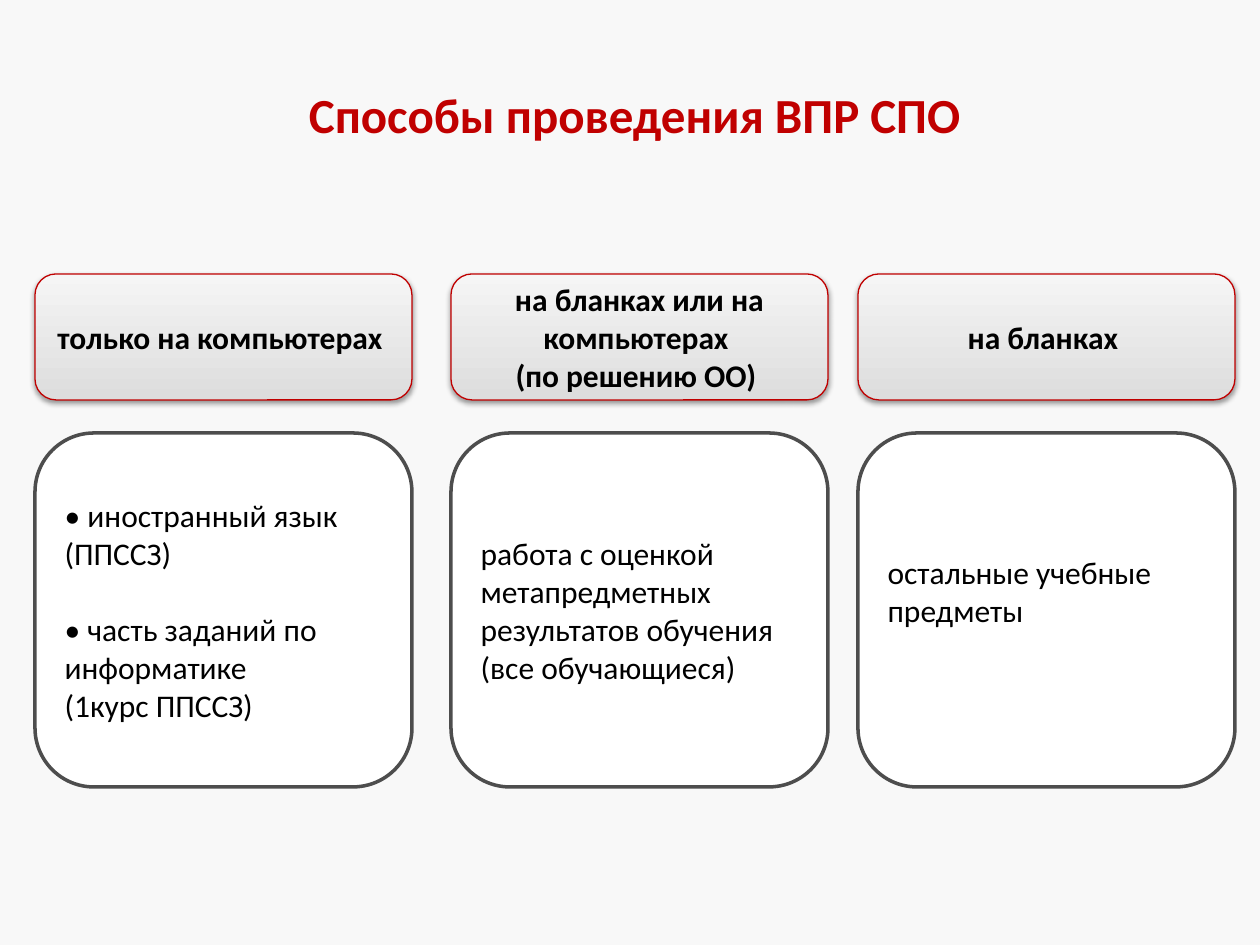
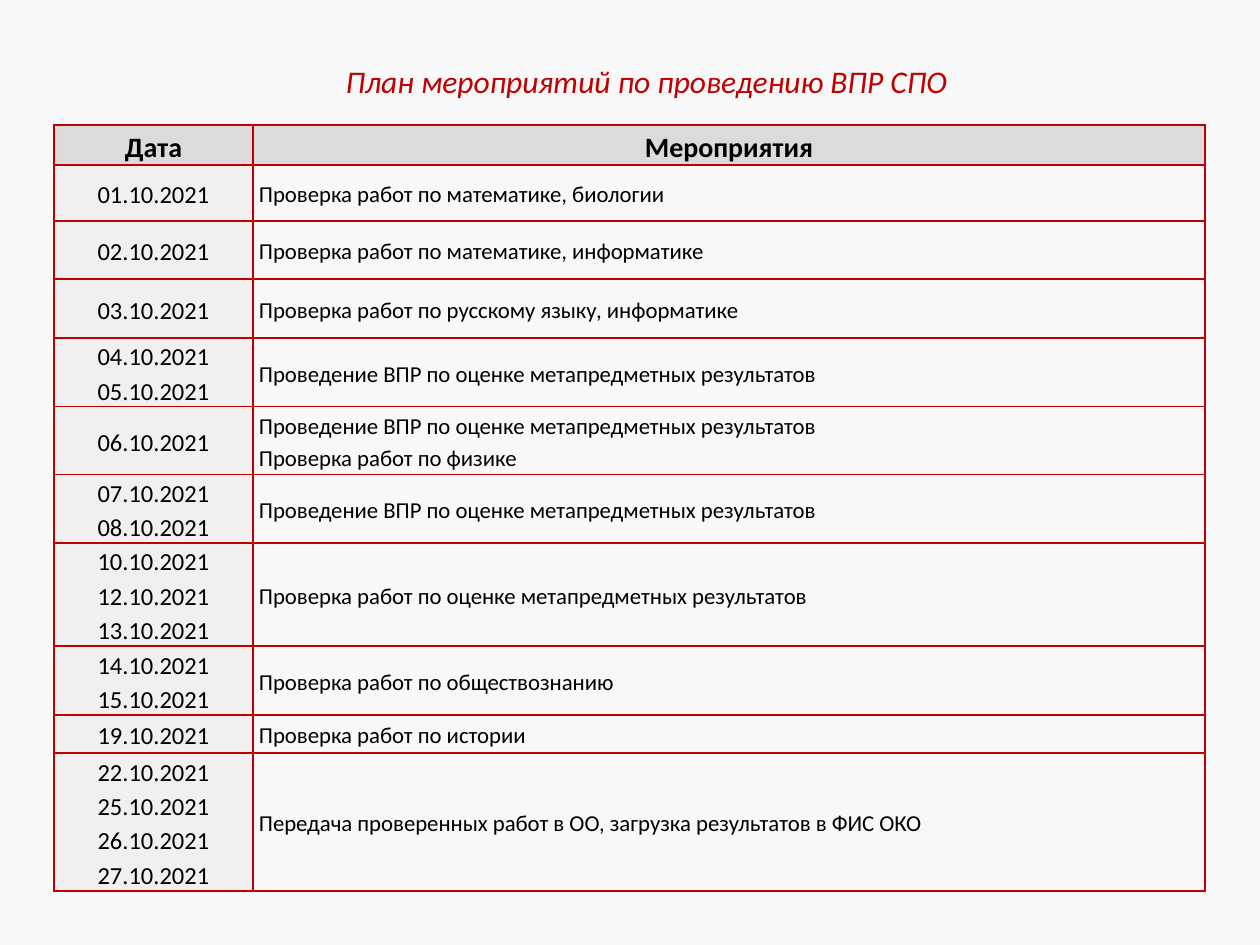
from lxml import etree
from pptx import Presentation
from pptx.dml.color import RGBColor
from pptx.enum.shapes import MSO_SHAPE
from pptx.enum.text import MSO_ANCHOR, MSO_AUTO_SIZE, PP_ALIGN
from pptx.oxml import parse_xml
from pptx.oxml.ns import nsdecls, qn
from pptx.util import Emu, Pt

ROUND_RECT = MSO_SHAPE.ROUNDED_RECTANGLE
LEFT, CENTER = PP_ALIGN.LEFT, PP_ALIGN.CENTER
MIDDLE = MSO_ANCHOR.MIDDLE

# Shared look
PX_PER_INCH = 126
FONT = "Calibri"
RED, BLACK, WHITE, GRAY = "C00000", "000000", "FFFFFF", "4D4D4D"
PAGE_FILL, HEAD_FILL, DATE_FILL = "F8F8F8", "DBDBDB", "F0F0F0"
GRADIENT = ("DDDDDD", "F5F5F5")
TITLE_ONLY = 5

# Slide 1: left edge, heading lines, body lines, extra room below the body
METHODS_TITLE = "Способы проведения ВПР СПО "
METHODS = [
    (35, ["только на компьютерах "],
     ["• иностранный язык (ППССЗ)", "• часть заданий по информатике",
      "(1курс ППССЗ)"], 0),
    (451, ["на бланках или на компьютерах ", "(по решению ОО) "],
     ["работа с оценкой метапредметных результатов обучения (все обучающиеся)"], 0),
    (858, ["на бланках "], ["остальные учебные предметы"], 38),
]
CARD_WIDTH = 377
HEAD_TOP, HEAD_HEIGHT = 274, 126
BODY_TOP, BODY_HEIGHT = 433, 354
INSET = 6
BULLET_GAP = 22

# Slide 2: row height, dates, events
PLAN_TITLE = "План мероприятий по проведению ВПР СПО"
PLAN_HEADER = (40, ["Дата"], ["Мероприятия"])
META_TEST = "Проведение ВПР по оценке метапредметных результатов"
PLAN = [
    (56, ["01.10.2021"], ["Проверка работ по математике, биологии"]),
    (58, ["02.10.2021"], ["Проверка работ по математике, информатике"]),
    (59, ["03.10.2021"], ["Проверка работ по русскому языку, информатике"]),
    (68, ["04.10.2021", "05.10.2021"], [META_TEST]),
    (68, ["06.10.2021"], [META_TEST, "Проверка работ по физике"]),
    (68, ["07.10.2021", "08.10.2021"], [META_TEST]),
    (103, ["10.10.2021", "12.10.2021", "13.10.2021"],
     ["Проверка работ по оценке метапредметных результатов"]),
    (69, ["14.10.2021", "15.10.2021"], ["Проверка работ по обществознанию"]),
    (38, ["19.10.2021"], ["Проверка работ по истории"]),
    (138, ["22.10.2021", "25.10.2021", "26.10.2021", "27.10.2021"],
     ["Передача проверенных работ в ОО, загрузка результатов в ФИС ОКО"]),
]
PLAN_LEFT, PLAN_TOP = 54, 125
PLAN_COLUMNS = (199, 952)


def px(length):
    return Emu(round(length * 914400 / PX_PER_INCH))


def color(value):
    return RGBColor.from_string(value)


def write(frame, lines, size, ink=BLACK, align=LEFT, bold=False, italic=False,
          spacing=None):
    frame.text = "\n".join(lines)
    for para in frame.paragraphs:
        para.alignment = align
        para.line_spacing = spacing
        for span in para.runs:
            font = span.font
            font.name, font.size = FONT, Pt(size)
            font.bold, font.italic = bold, italic
            font.color.rgb = color(ink)


def add_page(deck, title, place, size, wrap=True, **style):
    page = deck.slides.add_slide(deck.slide_layouts[TITLE_ONLY])
    box = page.shapes.title
    box.left, box.top, box.width, box.height = map(px, place)
    frame = box.text_frame
    frame.auto_size = MSO_AUTO_SIZE.NONE
    frame.word_wrap = wrap
    frame.vertical_anchor = MIDDLE
    write(frame, [title], size, RED, **style)
    return page


def add_card(page, left, top, height, line, line_width):
    card = page.shapes.add_shape(ROUND_RECT, px(left), px(top),
                                 px(CARD_WIDTH), px(height))
    card.shadow.inherit = False
    card.line.color.rgb = color(line)
    card.line.width = Pt(line_width)
    card.text_frame.word_wrap = True
    card.text_frame.vertical_anchor = MIDDLE
    return card


def add_heading(page, left, lines):
    card = add_card(page, left, HEAD_TOP, HEAD_HEIGHT, RED, 0.75)
    card.fill.gradient()
    card.fill.gradient_angle = 90
    for stop, value in zip(card.fill.gradient_stops, GRADIENT):
        stop.color.rgb = color(value)
    # Soft shadow below the heading
    effects = card.element.spPr.find(qn("a:effectLst"))
    effects.append(parse_xml(
        f'<a:outerShdw {nsdecls("a")} blurRad="39370" dist="20320" '
        f'dir="5400000" rotWithShape="0"><a:srgbClr val="{BLACK}">'
        '<a:alpha val="38000"/></a:srgbClr></a:outerShdw>'))
    write(card.text_frame, lines, 18, align=CENTER, bold=True)


def add_body(page, left, lines, room_below):
    card = add_card(page, left, BODY_TOP, BODY_HEIGHT, GRAY, 2)
    card.fill.solid()
    card.fill.fore_color.rgb = color(WHITE)
    frame = card.text_frame
    frame.margin_bottom = px(INSET + room_below)
    write(frame, lines, 18)
    for para in frame.paragraphs[1:]:
        if para.text.startswith("•"):
            para.space_before = Pt(BULLET_GAP)


def add_borders(cell):
    properties = cell._tc.get_or_add_tcPr()
    for position, side in enumerate(("lnL", "lnR", "lnT", "lnB")):
        border = etree.Element(qn(f"a:{side}"), w=str(Pt(1)))
        fill = etree.SubElement(border, qn("a:solidFill"))
        etree.SubElement(fill, qn("a:srgbClr"), val=RED)
        properties.insert(position, border)


def fill_cell(cell, lines, size, fill, align, bold):
    cell.margin_left = cell.margin_right = px(INSET)
    cell.margin_top = cell.margin_bottom = 0
    cell.vertical_anchor = MIDDLE
    if fill:
        cell.fill.solid()
        cell.fill.fore_color.rgb = color(fill)
    else:
        cell.fill.background()
    add_borders(cell)
    write(cell.text_frame, lines, size, align=align, bold=bold, spacing=1.15)


def build_methods(deck):
    page = add_page(deck, METHODS_TITLE, (73, 55, 1134, 118), 28,
                    align=CENTER, bold=True)
    for left, heading, body, room_below in METHODS:
        add_heading(page, left, heading)
        add_body(page, left, body, room_below)


def build_plan(deck):
    page = add_page(deck, PLAN_TITLE, (333, 55, 634, 51), 18, wrap=False,
                    italic=True)
    rows = [PLAN_HEADER] + PLAN
    height = sum(row[0] for row in rows)
    table = page.shapes.add_table(
        len(rows), len(PLAN_COLUMNS), px(PLAN_LEFT), px(PLAN_TOP),
        px(sum(PLAN_COLUMNS)), px(height)).table
    table.horz_banding = False
    for column, width in zip(table.columns, PLAN_COLUMNS):
        column.width = px(width)
    for index, (row_height, dates, events) in enumerate(rows):
        table.rows[index].height = px(row_height)
        date_cell, event_cell = table.rows[index].cells
        if index == 0:
            fill_cell(date_cell, dates, 16, HEAD_FILL, CENTER, True)
            fill_cell(event_cell, events, 16, HEAD_FILL, CENTER, True)
        else:
            fill_cell(date_cell, dates, 14, DATE_FILL, CENTER, False)
            fill_cell(event_cell, events, 13, None, LEFT, False)


def main():
    deck = Presentation()
    deck.slide_width, deck.slide_height = px(1260), px(945)
    backdrop = deck.slide_master.background.fill
    backdrop.solid()
    backdrop.fore_color.rgb = color(PAGE_FILL)
    build_methods(deck)
    build_plan(deck)
    deck.save("out.pptx")


if __name__ == "__main__":
    main()
